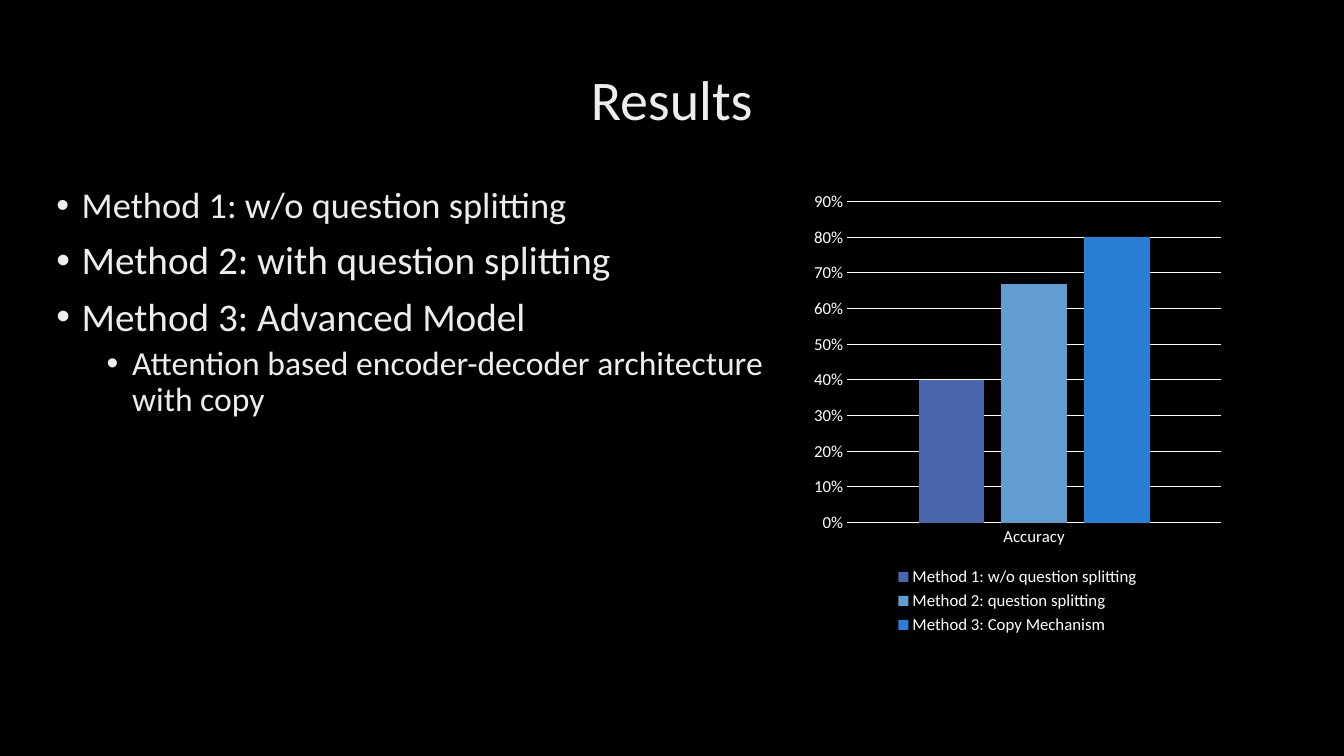
import pptx
import pptx.chart.data
import pptx.dml.color
import pptx.enum.chart
import pptx.enum.text
import pptx.oxml
import pptx.oxml.ns
import pptx.util
from pptx.util import Cm, Pt

COLORS = {
    "background": "000000",
    "text": "EDEDED",
    "chart": "FFFFFF",
    "method 1": "4A66AC",
    "method 2": "629DD1",
    "method 3": "297FD5",
}


def color(name):
    return pptx.dml.color.RGBColor.from_string(COLORS[name])


class SlideBuilder:
    """Holds the style and the slide that elements are added to."""

    font_name = "Calibri"
    line_spacing = 0.9
    bullet_indent = Cm(0.64)
    level_step = Cm(1.27)

    def __init__(self, presentation):
        self.slide = presentation.slides.add_slide(presentation.slide_layouts[6])
        fill = self.slide.background.fill
        fill.solid()
        fill.fore_color.rgb = color("background")

    def style_font(self, font, size, color_name):
        font.name = self.font_name
        font.size = Pt(size)
        font.color.rgb = color(color_name)

    def text_frame(self, left, top, width, height, anchor):
        text_frame = self.slide.shapes.add_textbox(left, top, width, height).text_frame
        text_frame.word_wrap = True
        text_frame.vertical_anchor = anchor
        return text_frame

    def fill_paragraph(self, paragraph, text, size):
        paragraph.text = text
        paragraph.line_spacing = self.line_spacing
        self.style_font(paragraph.runs[0].font, size, "text")

    def title(self, text, *box):
        text_frame = self.text_frame(*box, pptx.enum.text.MSO_ANCHOR.MIDDLE)
        paragraph = text_frame.paragraphs[0]
        paragraph.alignment = pptx.enum.text.PP_ALIGN.CENTER
        self.fill_paragraph(paragraph, text, 40)

    def add_bullet(self, paragraph, level):
        properties = paragraph._p.get_or_add_pPr()
        properties.set("marL", str(self.bullet_indent + level * self.level_step))
        properties.set("indent", str(-self.bullet_indent))
        namespace = pptx.oxml.ns.nsdecls("a")
        for xml in (f'<a:buFont {namespace} typeface="Arial"/>',
                    f'<a:buChar {namespace} char="•"/>'):
            properties.append(pptx.oxml.parse_xml(xml))

    def bullets(self, items, *box):
        """Add (text, size, level) items as a bulleted list."""
        text_frame = self.text_frame(*box, pptx.enum.text.MSO_ANCHOR.TOP)
        for index, (text, size, level) in enumerate(items):
            paragraph = text_frame.paragraphs[0] if index == 0 else text_frame.add_paragraph()
            paragraph.level = level
            self.add_bullet(paragraph, level)
            self.fill_paragraph(paragraph, text, size)
            if index:
                paragraph.space_before = Pt(5 if level else 10)

    def style_line(self, line):
        line.color.rgb = color("chart")
        line.width = Pt(0.75)

    def column_chart(self, category, series, *box):
        """Draw (name, value, color name) series as columns of one category."""
        data = pptx.chart.data.CategoryChartData(number_format="0%")
        data.categories = [category]
        for name, value, _ in series:
            data.add_series(name, [value])
        chart = self.slide.shapes.add_chart(
            pptx.enum.chart.XL_CHART_TYPE.COLUMN_CLUSTERED, *box, data).chart
        chart.has_title = False
        self.style_font(chart.font, 10, "chart")

        plot = chart.plots[0]
        plot.gap_width = 219
        plot.overlap = -27
        plot.vary_by_categories = False
        for column, (_, _, color_name) in zip(plot.series, series):
            column.format.fill.solid()
            column.format.fill.fore_color.rgb = color(color_name)

        for axis in (chart.category_axis, chart.value_axis):
            axis.major_tick_mark = pptx.enum.chart.XL_TICK_MARK.NONE
            axis.minor_tick_mark = pptx.enum.chart.XL_TICK_MARK.NONE
            self.style_font(axis.tick_labels.font, 12, "chart")
        self.style_line(chart.category_axis.format.line)
        value_axis = chart.value_axis
        value_axis.minimum_scale, value_axis.maximum_scale = 0, 0.9
        value_axis.major_unit = 0.1
        value_axis.tick_labels.number_format = "0%"
        value_axis.tick_labels.number_format_is_linked = False
        value_axis.format.line.fill.background()
        self.style_line(value_axis.major_gridlines.format.line)

        chart.has_legend = True
        chart.legend.position = pptx.enum.chart.XL_LEGEND_POSITION.BOTTOM
        chart.legend.include_in_layout = False
        self.style_font(chart.legend.font, 12, "chart")


def main():
    presentation = pptx.Presentation()
    presentation.slide_width = Cm(33.87)
    presentation.slide_height = Cm(19.05)
    builder = SlideBuilder(presentation)
    builder.title("Results", Cm(2.54), Cm(0.36), Cm(28.78), Cm(4.45))
    builder.bullets(
        [
            ("Method 1: w/o question splitting", 26, 0),
            ("Method 2: with question splitting", 28, 0),
            ("Method 3: Advanced Model", 28, 0),
            ("Attention based encoder-decoder architecture with copy", 24, 1),
        ],
        Cm(1.17), Cm(4.6), Cm(19.13), Cm(12.52))
    builder.column_chart(
        "Accuracy",
        [
            ("Method 1: w/o question splitting", 0.4, "method 1"),
            ("Method 2: question splitting", 0.67, "method 2"),
            ("Method 3: Copy Mechanism", 0.8, "method 3"),
        ],
        Cm(20.3), Cm(4.6), Cm(10.69), Cm(11.5))
    presentation.save("out.pptx")


if __name__ == "__main__":
    main()
